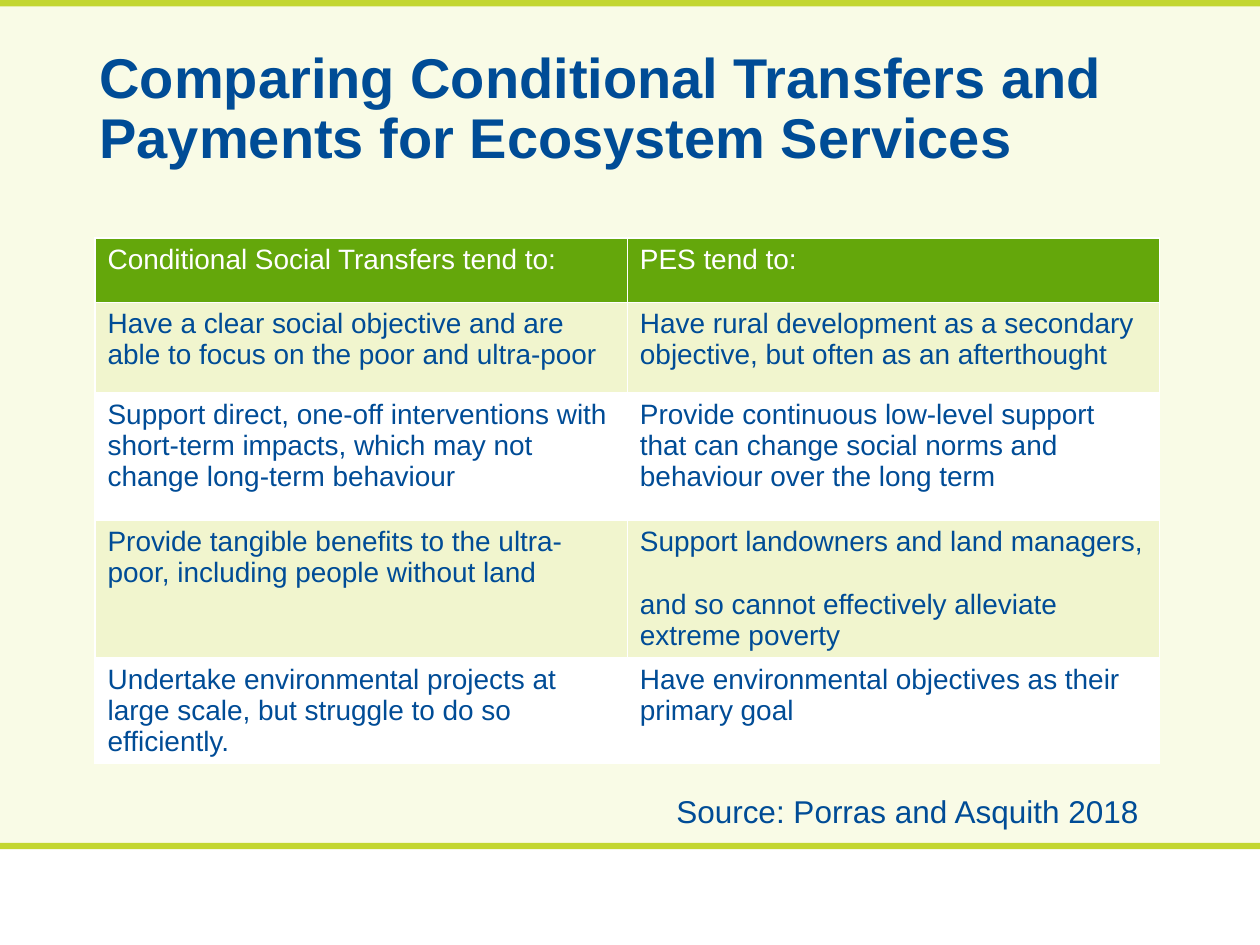
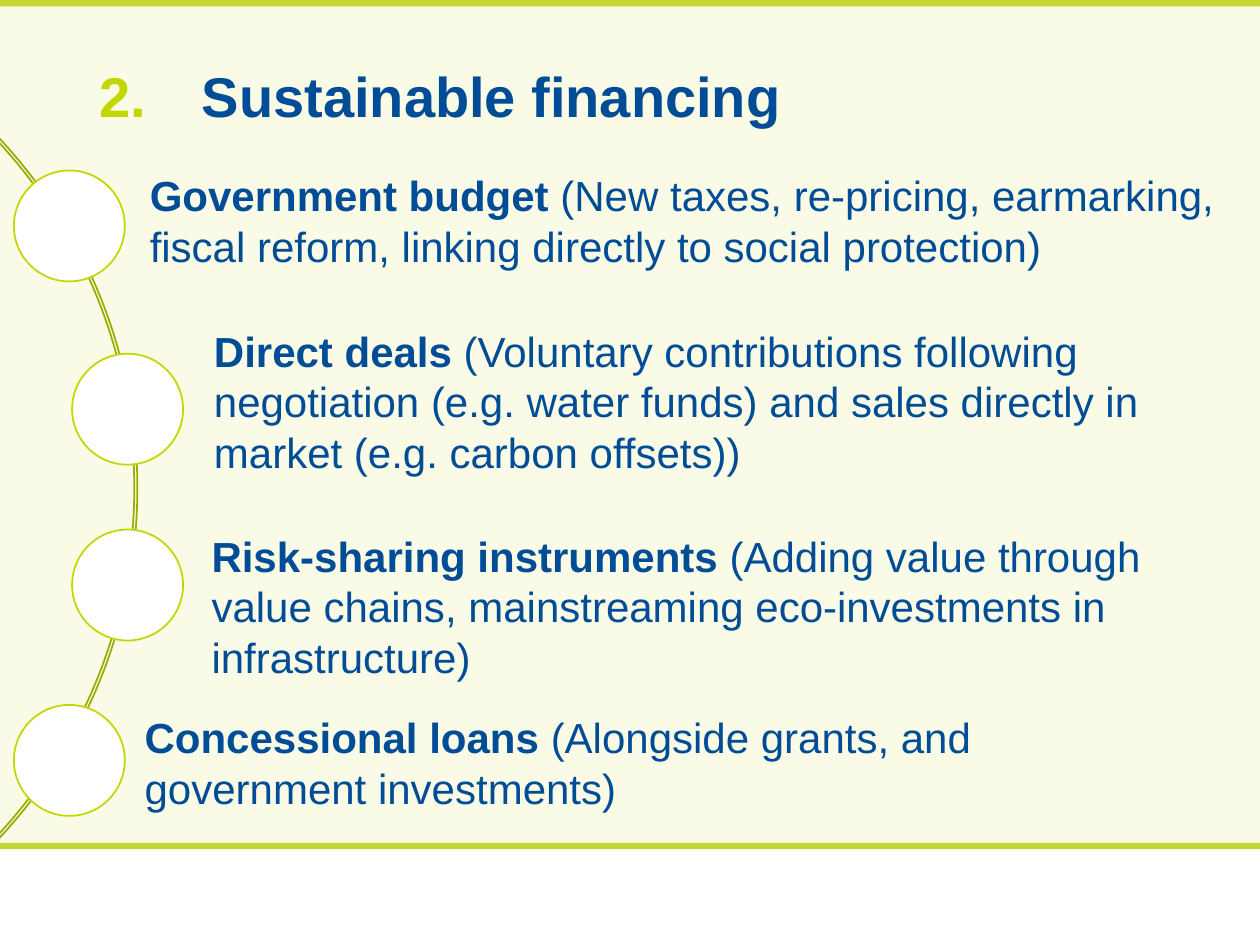
from lxml import etree
from pptx import Presentation
from pptx.dml.color import RGBColor
from pptx.enum.shapes import MSO_SHAPE
from pptx.enum.text import MSO_ANCHOR, MSO_AUTO_SIZE, PP_ALIGN
from pptx.oxml.ns import qn
from pptx.util import Pt

RECTANGLE, OVAL, BLOCK_ARC = MSO_SHAPE.RECTANGLE, MSO_SHAPE.OVAL, MSO_SHAPE.BLOCK_ARC
MIDDLE, LEFT, FIXED = MSO_ANCHOR.MIDDLE, PP_ALIGN.LEFT, MSO_AUTO_SIZE.NONE

NAVY = RGBColor(0x00, 0x4C, 0x96)
GREEN = RGBColor(0x64, 0xA7, 0x0B)
LIME = RGBColor(0xC3, 0xD6, 0x00)
BAND = RGBColor(0xC3, 0xD6, 0x31)
OLIVE = RGBColor(0x9C, 0xAB, 0x00)
CREAM = RGBColor(0xF9, 0xFB, 0xE6)
PALE_LIME = RGBColor(0xF1, 0xF5, 0xCE)
WHITE = RGBColor(0xFF, 0xFF, 0xFF)

FONT = "Arial"
TITLE_ONLY = 5
WIDTH, HEIGHT = 720, 540
FOOTER_TOP, BAND_HEIGHT = 485.3, 3.6

COMPARISON = [
    ["Conditional Social Transfers tend to:", "PES tend to:"],
    ["Have a clear social objective and are able to focus on the poor and ultra-poor",
     "Have rural development as a secondary objective, but often as an afterthought"],
    ["Support direct, one-off interventions with short-term impacts, "
     "which may not change long-term behaviour",
     "Provide continuous low-level support that can change social norms "
     "and behaviour over the long term"],
    ["Provide tangible benefits to the ultra-poor, including people without land",
     "Support landowners and land managers,\n"
     "and so cannot effectively alleviate extreme poverty"],
    ["Undertake environmental projects at large scale, but struggle to do so efficiently.",
     "Have environmental objectives as their primary goal"],
]
ROW_HEIGHTS = [36.7, 51.8, 72.7, 72.7, 51.8]

# Name, explanation, and the place of the text box
FINANCING = [
    ("Government budget", "(New taxes, re-pricing, earmarking, fiscal reform, "
     "linking directly to social protection)", (78.5, 93.6, 641.5, 67.7)),
    ("Direct deals", "(Voluntary contributions following negotiation (e.g. water funds) "
     "and sales directly in market (e.g. carbon offsets))", (115.2, 182.4, 590.4, 103)),
    ("Risk-sharing instruments", "(Adding value through value chains, "
     "mainstreaming eco-investments in infrastructure)", (113.8, 299.5, 590.4, 103)),
    ("Concessional loans", "(Alongside grants, and government investments)",
     (75.6, 403.2, 587.5, 67.7)),
]
CIRCLE_SIZE = 63.4
CIRCLE_CORNERS = [(7.9, 97.4), (41.2, 202.1), (41.2, 302.6), (7.9, 402.8)]


class Builder:
    def __init__(self, deck):
        self.deck = deck
        self.page = None

    def new_page(self):
        """Add a slide with the shared background, footer and bands."""
        self.page = self.deck.slides.add_slide(self.deck.slide_layouts[TITLE_ONLY])
        background = self.page.background.fill
        background.solid()
        background.fore_color.rgb = CREAM
        self.shape(RECTANGLE, (0, FOOTER_TOP, WIDTH, HEIGHT - FOOTER_TOP), WHITE)
        for top in (FOOTER_TOP - BAND_HEIGHT, 0):
            self.shape(RECTANGLE, (0, top, WIDTH, BAND_HEIGHT), BAND)

    def shape(self, kind, place, fill=None, line=None):
        shape = self.page.shapes.add_shape(kind, *map(Pt, place))
        shape.shadow.inherit = False
        if fill is None:
            shape.fill.background()
        else:
            shape.fill.solid()
            shape.fill.fore_color.rgb = fill
        if line is None:
            shape.line.fill.background()
        else:
            shape.line.color.rgb = line
            shape.line.width = Pt(1)
        return shape

    def span(self, para, text, size, color=NAVY, bold=False):
        span = para.add_run()
        span.text = text
        span.font.name = FONT
        span.font.size = Pt(size)
        span.font.bold = bold
        span.font.color.rgb = color

    def title(self, text, place, number=None):
        box = self.page.shapes.title
        box.left, box.top, box.width, box.height = map(Pt, place)
        frame = box.text_frame
        frame.auto_size = FIXED
        frame.vertical_anchor = MIDDLE
        para = frame.paragraphs[0]
        if number:
            self.number(para, number)
        para.alignment = LEFT
        para.line_spacing = 0.9
        self.span(para, text, 32, bold=True)

    def number(self, para, start):
        """Give the paragraph a lime automatic number and a hanging indent."""
        properties = para._p.get_or_add_pPr()
        indent = Pt(58.5)
        properties.set("marL", str(indent))
        properties.set("indent", str(-indent))
        color = etree.SubElement(properties, qn("a:buClr"))
        etree.SubElement(color, qn("a:srgbClr"), val=str(LIME))
        etree.SubElement(properties, qn("a:buFont"), typeface="+mj-lt")
        etree.SubElement(properties, qn("a:buAutoNum"), type="arabicPeriod",
                         startAt=str(start))

    def text(self, place, size, *spans):
        """Add a one-paragraph text box from (text, bold) pairs."""
        frame = self.page.shapes.add_textbox(*map(Pt, place)).text_frame
        frame.word_wrap = True
        for text, bold in spans:
            self.span(frame.paragraphs[0], text, size, bold=bold)

    def table(self, place, rows, heights):
        table = self.page.shapes.add_table(
            len(rows), len(rows[0]), *map(Pt, place)).table
        for column in table.columns:
            column.width = Pt(place[2] / len(rows[0]))
        for row_index, texts in enumerate(rows):
            table.rows[row_index].height = Pt(heights[row_index])
            header = row_index == 0
            fill = GREEN if header else PALE_LIME if row_index % 2 else WHITE
            for column_index, text in enumerate(texts):
                self.cell(table.cell(row_index, column_index), text, fill,
                          WHITE if header else NAVY)

    def cell(self, cell, text, fill, color):
        for side in ("a:lnL", "a:lnR", "a:lnT", "a:lnB"):
            border = etree.SubElement(cell._tc.get_or_add_tcPr(), qn(side), w=str(Pt(1)))
            paint = etree.SubElement(border, qn("a:solidFill"))
            etree.SubElement(paint, qn("a:srgbClr"), val=str(WHITE))
        cell.fill.solid()
        cell.fill.fore_color.rgb = fill
        frame = cell.text_frame
        for index, line in enumerate(text.split("\n")):
            para = frame.add_paragraph() if index else frame.paragraphs[0]
            if index:
                para.space_before = Pt(18)
            self.span(para, line, 16, color)


def comparison_page(builder):
    builder.new_page()
    builder.title("Comparing Conditional Transfers and Payments for Ecosystem Services",
                  (49.7, 10.8, 620.6, 104.4))
    builder.table((54.3, 136.1, 608.4, 285.7), COMPARISON, ROW_HEIGHTS)
    builder.text((379.4, 449.3, 283.7, 28.8), 18,
                 ("Source: Porras and Asquith 2018", False))


def financing_page(builder):
    builder.new_page()
    builder.title("Sustainable financing", (49.7, 17.3, 620.6, 78.5), number=2)
    arc = builder.shape(BLOCK_ARC, (-506.9, -13.7, 585.4, 585.4), line=OLIVE)
    for index, value in enumerate((189, 27, 0.003)):
        arc.adjustments[index] = value
    for left, top in CIRCLE_CORNERS:
        builder.shape(OVAL, (left, top, CIRCLE_SIZE, CIRCLE_SIZE), WHITE, LIME)
    for name, explanation, place in FINANCING:
        builder.text(place, 24, (name + " ", True), (explanation, False))


def main():
    deck = Presentation()
    deck.slide_width, deck.slide_height = Pt(WIDTH), Pt(HEIGHT)
    builder = Builder(deck)
    comparison_page(builder)
    financing_page(builder)
    deck.save("out.pptx")


if __name__ == "__main__":
    main()
